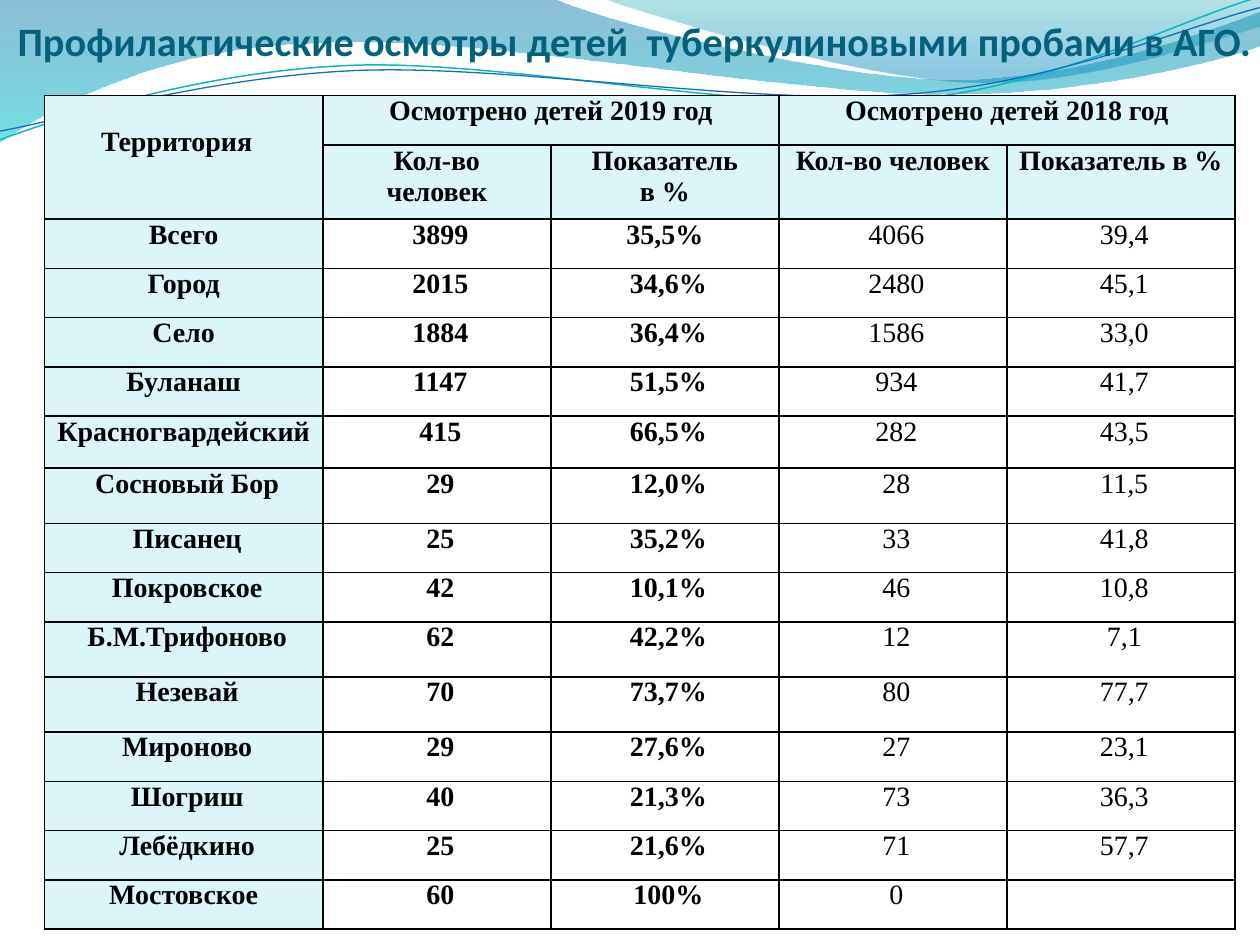
import math

from lxml import etree
from pptx import Presentation
from pptx import util as u
from pptx.dml.color import RGBColor
from pptx.enum import text
from pptx.oxml.ns import qn

BROAD_WAVE = [
    (0, 0), (316.8, -0.7),
    (342.7, 12.2, 478.1, 45.4, 545.8, 45.4),
    (614.2, 45.4, 689.8, 18.7, 720, 6.5), (720.7, 25.9),
    (707.8, 31.7, 626.4, 54.7, 537.1, 54),
    (447.8, 54, 275, 20.2, 185, 24.5),
    (92.9, 25.9, 33.1, 59.8, -0.7, 81.4), (0, 0),
]
RIGHT_WAVE = [
    (344.9, -0.7),
    (366.5, 7.9, 491, 44.6, 553.7, 46.8),
    (616.3, 49.7, 691.9, 23, 720, 15.1), (720, 0), (344.9, -0.7),
]
TEAL_LINE = [
    (0, 79.9),
    (34.6, 67, 113.8, 41, 199.4, 37.4),
    (284.4, 33.8, 427, 64.1, 513.4, 57.6),
    (599.8, 51.1, 675.4, 10.8, 718.6, -1.4),
]
BLUE_LINE = [
    (0, 74.9),
    (33.8, 69.1, 118.1, 43.9, 203.8, 40.3),
    (290.2, 36.7, 430, 60.5, 516.2, 54),
    (601.9, 48.2, 677.5, 15.1, 720, 4.3),
]
LINE_TILT = -2.7

TITLE = "Профилактические осмотры детей  туберкулиновыми пробами в АГО."
HEADER = [
    ["Территория", "Осмотрено детей 2019 год", "", "Осмотрено детей 2018 год", ""],
    ["", "Кол-во\nчеловек", "Показатель\nв %", "Кол-во человек", "Показатель в %"],
]
BODY = [
    ["Всего", "3899", "35,5%", "4066", "39,4"],
    ["Город", "2015", "34,6%", "2480", "45,1"],
    ["Село", "1884", "36,4%", "1586", "33,0"],
    ["Буланаш", "1147", "51,5%", "934", "41,7"],
    ["Красногвардейский", "415", "66,5%", "282", "43,5"],
    ["Сосновый Бор", "29", "12,0%", "28", "11,5"],
    ["Писанец", "25", "35,2%", "33", "41,8"],
    ["Покровское", "42", "10,1%", "46", "10,8"],
    ["Б.М.Трифоново", "62", "42,2%", "12", "7,1"],
    ["Незевай", "70", "73,7%", "80", "77,7"],
    ["Мироново", "29", "27,6%", "27", "23,1"],
    ["Шогриш", "40", "21,3%", "73", "36,3"],
    ["Лебёдкино", "25", "21,6%", "71", "57,7"],
    ["Мостовское", "60", "100%", "0", ""],
]
COLUMN_WIDTHS = [159.1] + [130.3] * 4
ROW_HEIGHT = 28.15
TALL_ROWS = {1: 42.4, 6: 29.7, 7: 31.5, 10: 31.5, 11: 31.5}
INDENTED_NAMES = range(7, 15)


def rgb(value):
    """Turn a hex string into a colour."""
    return RGBColor.from_string(value)


def add_outline(s, outline, box, tilt=0):
    """Add a freeform of lines and cubic curves in a box tilted by some degrees."""
    left, top, width, height = box
    builder = s.shapes.build_freeform(u.Pt(left), u.Pt(top))
    corner = (u.Pt(left + width), u.Pt(top + height))
    builder.add_line_segments([corner], close=False)
    sp = builder.convert_to_shape()
    sp.shadow.inherit = False
    sp.rotation = tilt
    cos, sin = math.cos(math.radians(tilt)), math.sin(math.radians(tilt))
    track = next(sp.element.iter(qn("a:path")))
    for child in list(track):
        track.remove(child)
    for i, segment in enumerate(outline):
        tag = "a:moveTo" if i == 0 else "a:lnTo" if len(segment) == 2 else "a:cubicBezTo"
        command = etree.SubElement(track, qn(tag))
        for x, y in zip(segment[::2], segment[1::2]):
            dx, dy = x - left - width / 2, y - top - height / 2
            etree.SubElement(command, qn("a:pt"),
                             x=str(u.Pt(dx * cos + dy * sin + width / 2)),
                             y=str(u.Pt(dy * cos - dx * sin + height / 2)))
    if outline[0] == outline[-1]:
        track.remove(track[-1])
        etree.SubElement(track, qn("a:close"))
    return sp


def add_wave(s, outline, box, stops):
    """Add a closed wave with a translucent top-to-bottom gradient."""
    sp = add_outline(s, outline, box)
    sp.line.fill.background()
    sp.fill.gradient()
    sp.fill.gradient_angle = 270
    for stop, (position, color, _) in zip(sp.fill.gradient_stops, stops):
        stop.position = position
        stop.color.rgb = rgb(color)
    colors = sp.element.spPr.iter(qn("a:srgbClr"))
    for color, (_, _, opacity) in zip(list(colors), stops):
        etree.SubElement(color, qn("a:alpha"), val=str(opacity * 1000))


def add_curve(s, outline, box, color, width):
    """Add an open curved line."""
    sp = add_outline(s, outline, box, LINE_TILT)
    sp.fill.background()
    sp.line.color.rgb = rgb(color)
    sp.line.width = u.Pt(width)


def format_text(tf, font, size, color, bold, align):
    """Format every paragraph and run of a text frame."""
    for p in tf.paragraphs:
        p.alignment = align
        for r in p.runs:
            r.font.name = font
            r.font.size = u.Pt(size)
            r.font.bold = bold
            r.font.color.rgb = rgb(color)


def set_borders(cell, color, width):
    """Draw a solid line on all four sides of a cell."""
    tc_pr = cell._tc.get_or_add_tcPr()
    for index, side in enumerate(("a:lnL", "a:lnR", "a:lnT", "a:lnB")):
        line = etree.Element(qn(side), w=str(u.Pt(width)))
        fill = etree.SubElement(line, qn("a:solidFill"))
        etree.SubElement(fill, qn("a:srgbClr"), val=color)
        tc_pr.insert(index, line)


def fill_cell(cell, content, tinted, bold, margin, indent):
    """Write and format one table cell."""
    cell.text_frame.text = content
    format_text(cell.text_frame, "Times New Roman", 16, "000000", bold, text.PP_ALIGN.CENTER)
    cell.margin_left, cell.margin_right = u.Pt(margin + indent), u.Pt(margin)
    cell.margin_top = cell.margin_bottom = 0
    if tinted:
        cell.fill.solid()
        cell.fill.fore_color.rgb = rgb("DBF5F9")
    else:
        cell.fill.background()
    set_borders(cell, "000000", 1)


def add_results(s):
    """Add the table of examined children by territory and year."""
    rows = HEADER + BODY
    heights = [TALL_ROWS.get(i, ROW_HEIGHT) for i in range(len(rows))]
    frame = s.shapes.add_table(
        len(rows), len(COLUMN_WIDTHS), u.Pt(25.4), u.Pt(54.7),
        u.Pt(sum(COLUMN_WIDTHS)), u.Pt(sum(heights)))
    table = frame.table
    table.first_row = table.horz_banding = False
    for column, width in zip(table.columns, COLUMN_WIDTHS):
        column.width = u.Pt(width)
    for i, (row, height) in enumerate(zip(rows, heights)):
        table.rows[i].height = u.Pt(height)
        for j, content in enumerate(row):
            header = i < len(HEADER)
            indented = i in INDENTED_NAMES if j == 0 else not header and (i, j) != (2, 2)
            fill_cell(table.cell(i, j), content, header or j == 0,
                      header or j < 3, 3.6 if j < 3 else 5, 4 if indented else 0)
    corner = table.cell(0, 0)
    corner.margin_top, corner.margin_right = u.Pt(17.5), u.Pt(11.6)
    corner.merge(table.cell(1, 0))
    for j in (1, 3):
        table.cell(0, j).merge(table.cell(0, j + 1))


def set_title(s):
    """Place the title in front of the waves and format it."""
    title = s.shapes.title
    title.left, title.top, title.width, title.height = map(u.Pt, (2.9, 5.8, 725.8, 35.3))
    tf = title.text_frame
    tf.text = TITLE
    tf.word_wrap = False
    tf.auto_size = text.MSO_AUTO_SIZE.NONE
    tf.vertical_anchor = text.MSO_ANCHOR.TOP
    format_text(tf, "Calibri", 23, "04617B", True, text.PP_ALIGN.LEFT)
    title.element.getparent().append(title.element)


def main():
    """Build and save the slide."""
    prs = Presentation()
    prs.slide_width, prs.slide_height = u.Pt(720), u.Pt(540)
    s = prs.slides.add_slide(prs.slide_layouts[5])
    add_wave(s, BROAD_WAVE, (-0.7, -0.7, 721.4, 82.1), [(0, "0074A1", 45), (1, "00C6CF", 55)])
    add_wave(s, RIGHT_WAVE, (344.9, -0.7, 375.1, 50.4), [(0, "00A1A9", 30), (0.8, "008BBF", 45)])
    add_curve(s, TEAL_LINE, (-1.4, 15.8, 721.4, 51.1), "0AB8BF", 0.85)
    add_curve(s, BLUE_LINE, (-1.4, 21.6, 722.2, 41.8), "0F6FC6", 0.75)
    add_results(s)
    set_title(s)
    prs.save("out.pptx")


if __name__ == "__main__":
    main()
